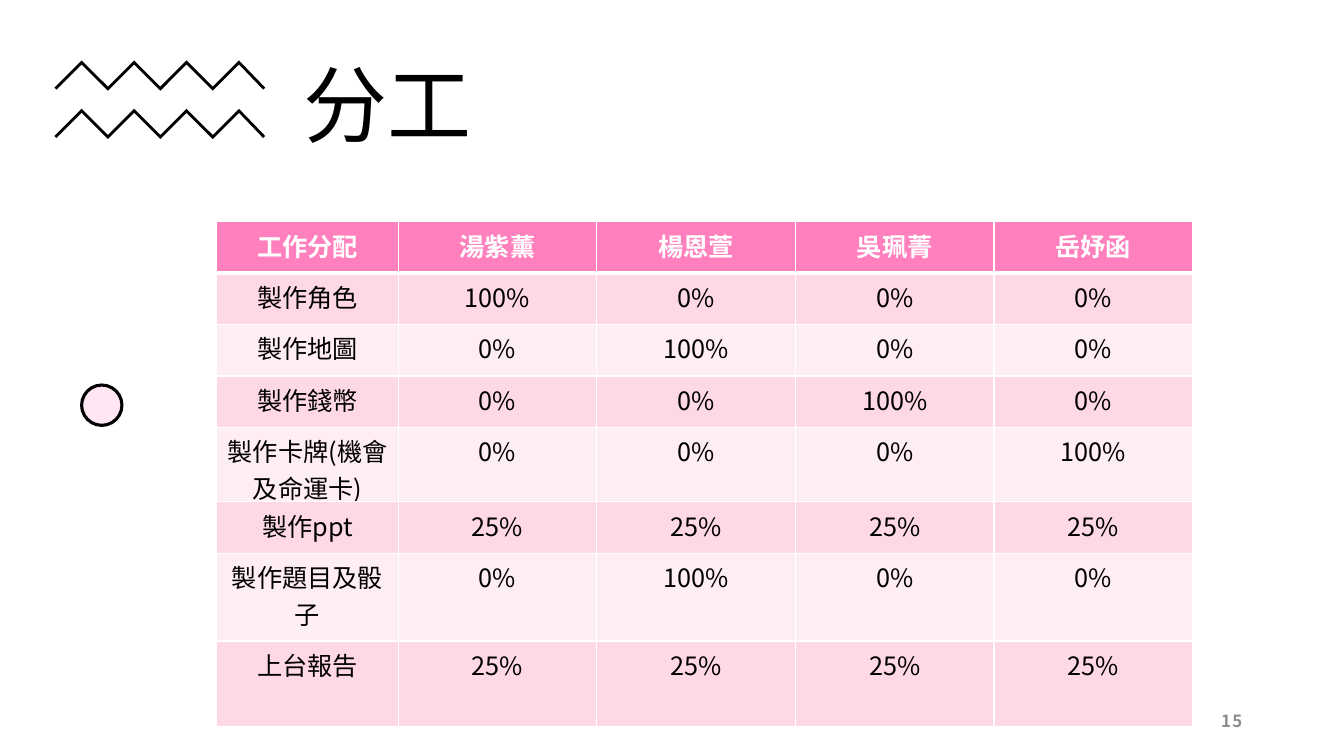
"""Build the work-allocation slide with its task table."""
from pptx import Presentation
from pptx.dml.color import RGBColor
from pptx.enum import shapes, text
from pptx.oxml import ns
from pptx.util import Inches, Pt
from lxml import etree

SC, TC = "Noto Sans CJK SC", "Noto Sans CJK TC"
BLACK, WHITE, PINK, GREY = "000000", "FFFFFF", "FF80BD", "8C8C8C"
BANDS = ("FFD8E8", "FFEDF4")
PALE_PINK = "FFE6F2"
TITLE = "分工"
PAGE = "15"
ROWS = [
    ("工作分配", "湯紫薰", "楊恩萱", "吳珮菁", "岳妤函"),
    ("製作角色", "100%", "0%", "0%", "0%"),
    ("製作地圖", "0%", "100%", "0%", "0%"),
    ("製作錢幣", "0%", "0%", "100%", "0%"),
    ("製作卡牌(機會及命運卡)", "0%", "0%", "0%", "100%"),
    ("製作ppt", "25%", "25%", "25%", "25%"),
    ("製作題目及骰子", "0%", "100%", "0%", "0%"),
    ("上台報告", "25%", "25%", "25%", "25%"),
]
COL_WIDTHS = (1.8, 1.97, 1.97, 1.97, 1.97)
ROW_HEIGHTS = (0.51, 0.51, 0.51, 0.51, 0.74, 0.51, 0.87, 0.85)
ZIGZAG_TOPS = (0.6, 1.08)


def rgb(color):
    """Return a colour object for a hex string."""
    return RGBColor.from_string(color)


def write(tf, content, size=18, color=BLACK, font=SC, bold=False,
          align=text.PP_ALIGN.LEFT, anchor=text.MSO_ANCHOR.TOP, line=None, spacing=None):
    """Put one formatted paragraph into a text frame."""
    tf.word_wrap = True
    tf.vertical_anchor = anchor
    p = tf.paragraphs[0]
    p.alignment = align
    if line:
        p.line_spacing = line
    r = p.add_run()
    r.text = content
    r.font.size, r.font.bold, r.font.name = Pt(size), bold, font
    r.font.color.rgb = rgb(color)
    rPr = r.font._element
    etree.SubElement(rPr, ns.qn("a:ea")).set("typeface", font)
    if spacing:
        rPr.set("spc", str(spacing))


def add_borders(cell, **widths):
    """Draw white cell borders with the given widths in points."""
    tcPr = cell._tc.get_or_add_tcPr()
    for side in "LRTB":
        ln = etree.SubElement(tcPr, ns.qn(f"a:ln{side}"), w=str(Pt(widths.get(side, 1))))
        fill = etree.SubElement(ln, ns.qn("a:solidFill"))
        etree.SubElement(fill, ns.qn("a:srgbClr"), val=WHITE)


def add_zigzag(s, top):
    """Draw one zigzag band."""
    peaks = [(0.81 + 0.26 * i, top + 0.26 * (i % 2)) for i in range(7)]
    upper = [(0.54, top + 0.27), *peaks, (2.63, top + 0.27)]
    lower = [(2.61, top + 0.29), *((x, y + 0.04) for x, y in reversed(peaks)), (0.56, top + 0.29)]
    points = [(Inches(x), Inches(y)) for x, y in upper + lower]
    builder = s.shapes.build_freeform(*points[0])
    builder.add_line_segments(points[1:], close=True)
    sp = builder.convert_to_shape()
    sp.shadow.inherit = False
    sp.fill.solid()
    sp.fill.fore_color.rgb = rgb(BLACK)
    sp.line.fill.background()


def add_task_table(s):
    """Add the table of tasks and shares."""
    frame = s.shapes.add_table(len(ROWS), len(COL_WIDTHS), Inches(2.15), Inches(2.2),
                               Inches(sum(COL_WIDTHS)), Inches(sum(ROW_HEIGHTS)))
    table = frame.table
    for column, width in zip(table.columns, COL_WIDTHS):
        column.width = Inches(width)
    for i, (values, height) in enumerate(zip(ROWS, ROW_HEIGHTS)):
        table.rows[i].height = Inches(height)
        header = i == 0
        for j, value in enumerate(values):
            cell = table.cell(i, j)
            add_borders(cell, T=3 if i == 1 else 1, B=3 if header else 1)
            cell.fill.solid()
            cell.fill.fore_color.rgb = rgb(PINK if header else BANDS[(i - 1) % 2])
            write(cell.text_frame, value, color=WHITE if header else BLACK,
                  bold=header, align=text.PP_ALIGN.CENTER)


def main():
    """Assemble and save the slide."""
    prs = Presentation()
    prs.slide_width, prs.slide_height = Inches(13.33), Inches(7.5)
    s = prs.slides.add_slide(prs.slide_layouts[5])

    dot = s.shapes.add_shape(shapes.MSO_SHAPE.OVAL, Inches(0.81), Inches(3.82),
                             Inches(0.4), Inches(0.4))
    dot.shadow.inherit = False
    dot.fill.solid()
    dot.fill.fore_color.rgb = rgb(PALE_PINK)
    dot.line.color.rgb = rgb(BLACK)
    dot.line.width = Pt(2.25)
    for top in ZIGZAG_TOPS:
        add_zigzag(s, top)

    title = s.shapes.title
    title.left, title.top = Inches(2.91), Inches(0.31)
    title.width, title.height = Inches(5.71), Inches(1.27)
    write(title.text_frame, TITLE, size=60, anchor=text.MSO_ANCHOR.BOTTOM, line=0.9)

    page = s.shapes.add_textbox(Inches(9.42), Inches(6.95), Inches(3), Inches(0.4))
    write(page.text_frame, PAGE, size=12, color=GREY, font=TC, bold=True,
          align=text.PP_ALIGN.RIGHT, anchor=text.MSO_ANCHOR.MIDDLE, spacing=100)
    add_task_table(s)
    prs.save("out.pptx")


if __name__ == "__main__":
    main()
